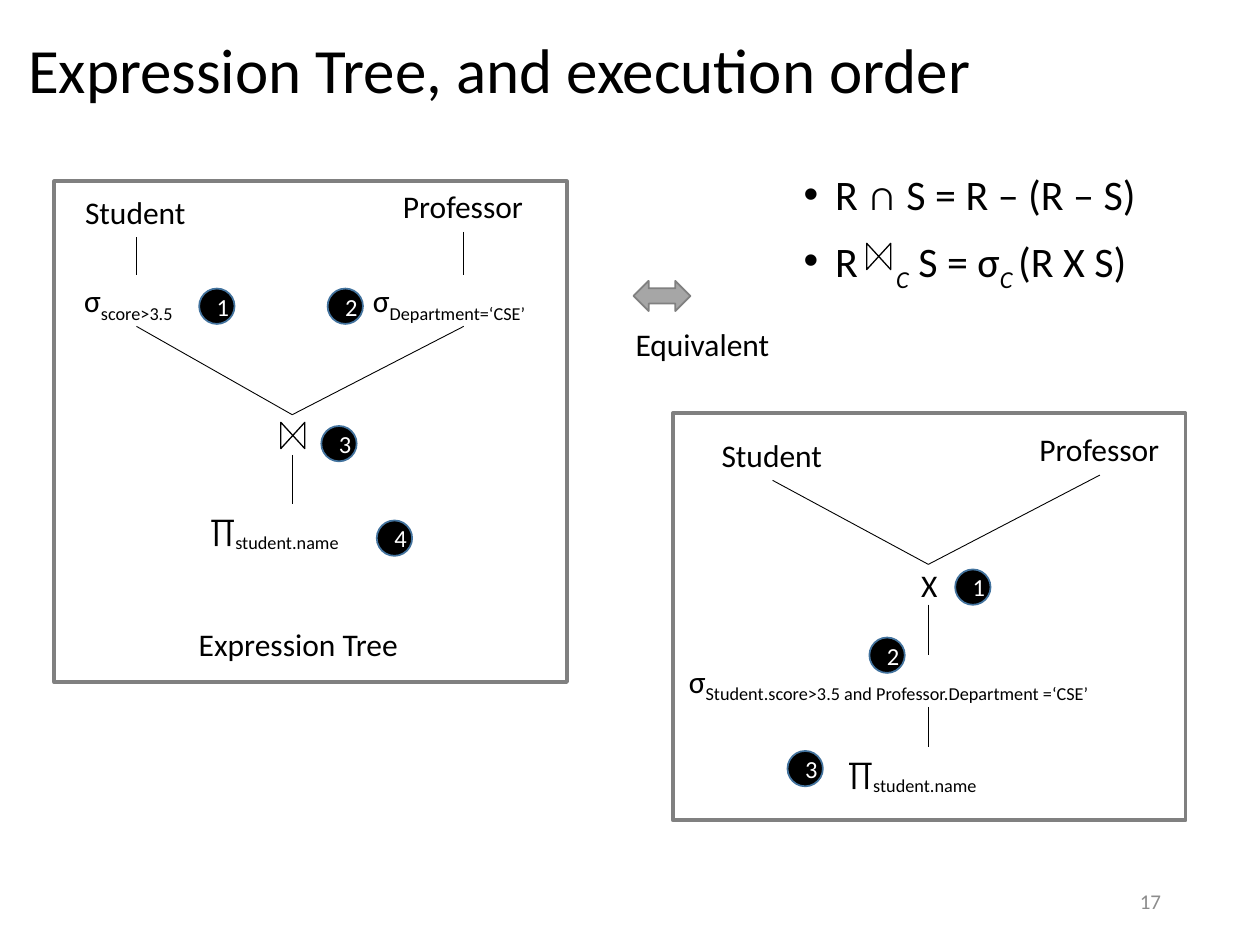
from dataclasses import dataclass

import pptx
import pptx.dml.color
import pptx.enum.shapes
import pptx.enum.text
import pptx.oxml.ns
import pptx.util
from lxml import etree

Pt = pptx.util.Pt
Kind = pptx.enum.shapes.MSO_SHAPE
Align = pptx.enum.text.PP_ALIGN
Anchor = pptx.enum.text.MSO_ANCHOR
qn = pptx.oxml.ns.qn

HUES = {
    "ink": "000000",
    "paper": "FFFFFF",
    "frame": "808080",
    "arrow": "A6A6A6",
    "ring": "43739E",
    "page": "8C8C8C",
}
FONT = "Calibri"
DISC = 20.2


@dataclass
class Label:
    text: str
    x: float
    y: float
    width: float
    height: float = 29
    wrap: bool = True
    middle: bool = False
    align: Align = Align.LEFT
    size: float = 18
    hue: str = "ink"
    lines: float = 1


@dataclass
class Edge:
    x1: float
    y1: float
    x2: float
    y2: float


@dataclass
class Step:
    num: int
    x: float
    y: float


@dataclass
class Form:
    kind: Kind
    x: float
    y: float
    width: float
    height: float
    line: str
    weight: float
    fill: str = ""
    turn: float = 0


LABELS = [
    Label("Expression Tree, and execution order", 9, 6, 703, 71, middle=True, size=36, lines=0.9),
    Label("17", 508.5, 500.5, 162, middle=True, align=Align.RIGHT, size=12, hue="page"),
    Label("Expression Tree", 99.5, 353.5, 142, align=Align.CENTER),
    Label("∏|student.name", 113, 288, 108),
    Label("σ|score>3.5", 41, 157, 73.5, wrap=False),
    Label("Student", 41.5, 106.5, 73, wrap=False),
    Label("Professor", 223.2, 103.5, 83.5, wrap=False),
    Label("σ|Department=‘CSE’", 206, 157, 118, wrap=False),
    Label("∏|student.name", 477.5, 427, 108),
    Label("σ|Student.score>3.5 and Professor.Department =‘CSE’", 386.5, 374.5, 289),
    Label("Student", 405.2, 245.5, 73, wrap=False),
    Label("Professor", 586.8, 242, 83.5, wrap=False),
    Label("X", 517, 322.5, 28, 23, middle=True, align=Align.CENTER),
    Label("Equivalent", 354.2, 182, 94.5, align=Align.CENTER),
]

EDGES = [
    Edge(78, 186.5, 167, 237),
    Edge(265, 186.5, 167, 237),
    Edge(265, 132.5, 265, 157),
    Edge(78, 135.5, 78, 157),
    Edge(167, 260, 167, 288),
    Edge(441.5, 274.5, 530.5, 322.5),
    Edge(628.5, 271.5, 530.5, 322.5),
    Edge(530.5, 345.5, 530.5, 374.5),
    Edge(530.5, 404, 530.5, 427),
]

FORMS = [
    Form(Kind.FLOWCHART_COLLATE, 159.8, 242, 15, 13.7, "ink", 0.75, turn=90),
    Form(Kind.FLOWCHART_COLLATE, 494.6, 139.7, 15, 13.7, "ink", 0.75, turn=90),
    Form(Kind.LEFT_RIGHT_ARROW, 362, 160.5, 32.5, 17.3, "frame", 1, "arrow"),
    Form(Kind.RECTANGLE, 31, 103.7, 293, 286, "frame", 2.25),
    Form(Kind.RECTANGLE, 384.5, 236.2, 293, 232.5, "frame", 2.25),
]

STEPS = [
    Step(1, 113.8, 164.9),
    Step(2, 187.2, 164.9),
    Step(3, 183.6, 243.4),
    Step(4, 215.3, 297.4),
    Step(1, 545.8, 325.4),
    Step(2, 496.8, 364.3),
    Step(3, 450, 429.1),
]


def tint(name: str) -> pptx.dml.color.RGBColor:
    return pptx.dml.color.RGBColor.from_string(HUES[name])


def write(para, text: str, size: float = 18, hue: str = "ink", align: Align = Align.LEFT,
          lines: float = 1, slant: bool = False, gap: float = 0) -> None:
    para.alignment = align
    para.line_spacing = lines
    for rank, part in enumerate(text.split("|")):
        run = para.add_run()
        run.text = part
        run.font.name = FONT
        run.font.size = Pt(size)
        run.font.color.rgb = tint(hue)
        props = run._r.get_or_add_rPr()
        if rank % 2:
            props.set("baseline", "-25000")
            run.font.italic = slant
        if gap and rank == 0:
            props.set("spc", str(round(gap * 100)))


def label(slide, item: Label) -> None:
    box = slide.shapes.add_textbox(Pt(item.x), Pt(item.y), Pt(item.width), Pt(item.height))
    frame = box.text_frame
    frame.word_wrap = item.wrap
    frame.vertical_anchor = Anchor.MIDDLE if item.middle else Anchor.TOP
    write(frame.paragraphs[0], item.text, size=item.size, hue=item.hue,
          align=item.align, lines=item.lines)


def edge(slide, item: Edge) -> None:
    line = slide.shapes.add_connector(
        pptx.enum.shapes.MSO_CONNECTOR.STRAIGHT,
        Pt(item.x1), Pt(item.y1), Pt(item.x2), Pt(item.y2))
    line.line.color.rgb = tint("ink")
    line.line.width = Pt(0.5)
    etree.SubElement(line._element.spPr, qn("a:effectLst"))


def form(slide, item: Form):
    shape = slide.shapes.add_shape(
        item.kind, Pt(item.x), Pt(item.y), Pt(item.width), Pt(item.height))
    shape.shadow.inherit = False
    shape.rotation = item.turn
    shape.line.color.rgb = tint(item.line)
    shape.line.width = Pt(item.weight)
    if item.fill:
        shape.fill.solid()
        shape.fill.fore_color.rgb = tint(item.fill)
    else:
        shape.fill.background()
    return shape


def step(slide, item: Step) -> None:
    disc = form(slide, Form(Kind.OVAL, item.x, item.y, DISC, DISC, "ring", 1, "ink"))
    disc.text_frame.vertical_anchor = Anchor.MIDDLE
    write(disc.text_frame.paragraphs[0], str(item.num), size=14, hue="paper", align=Align.CENTER)


def rules(slide) -> None:
    frame = slide.shapes.add_textbox(Pt(452.2), Pt(95.8), Pt(213.8), Pt(79.2)).text_frame
    frame.word_wrap = True
    first, second = frame.paragraphs[0], frame.add_paragraph()
    write(first, "R ∩ S = R – (R – S)", size=24, lines=0.9)
    write(second, "R|C| S = σ|C |(R X S)", size=24, lines=0.9, slant=True, gap=21.7)
    for para in (first, second):
        para.space_before = Pt(10)
        props = para._p.get_or_add_pPr()
        props.set("marL", str(Pt(18)))
        props.set("indent", str(-Pt(18)))
        etree.SubElement(props, qn("a:buFont"), typeface="Arial")
        etree.SubElement(props, qn("a:buChar"), char="•")


def main() -> None:
    deck = pptx.Presentation()
    deck.slide_width, deck.slide_height = Pt(720), Pt(540)
    slide = deck.slides.add_slide(deck.slide_layouts[6])
    for draw, items in ((label, LABELS), (edge, EDGES), (form, FORMS), (step, STEPS)):
        for item in items:
            draw(slide, item)
    rules(slide)
    deck.save("out.pptx")


if __name__ == "__main__":
    main()
